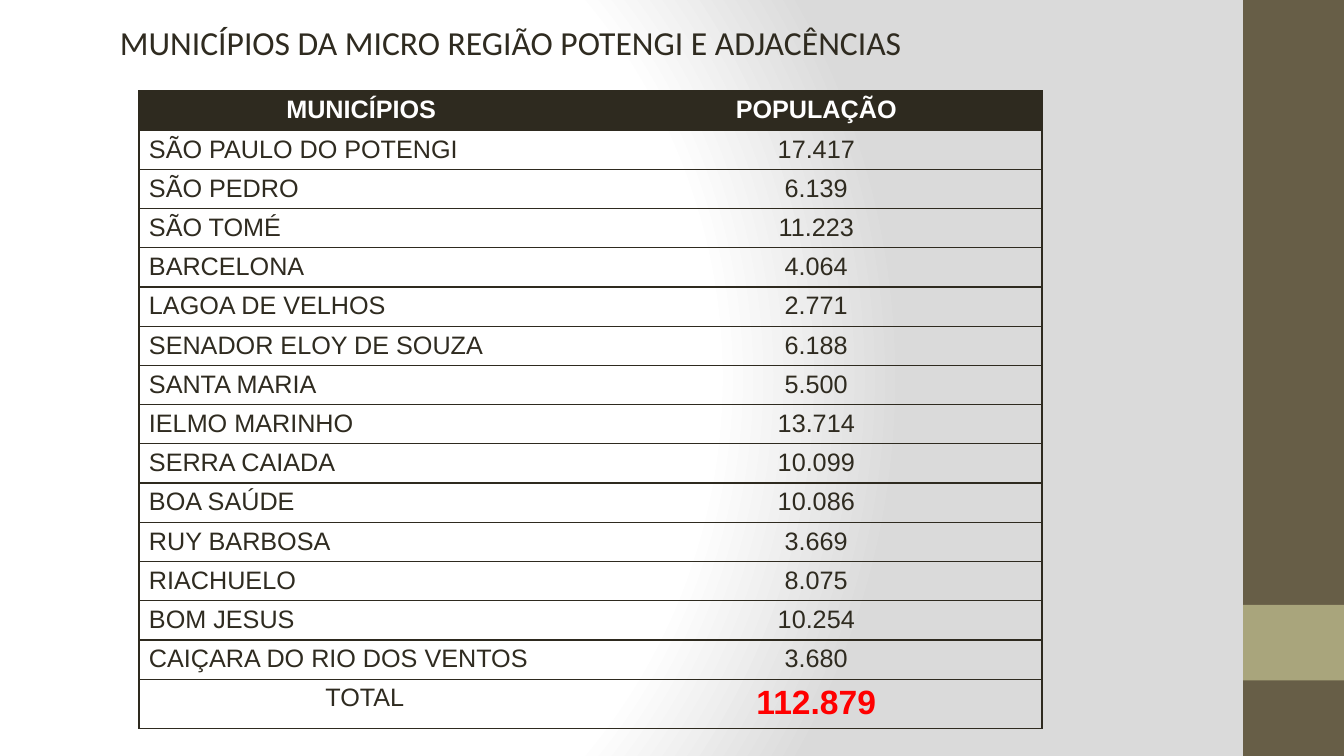
from pptx import Presentation
from pptx.dml.color import RGBColor
from pptx.enum.shapes import MSO_SHAPE as Shape
from pptx.enum.text import MSO_ANCHOR as Anchor, PP_ALIGN as Align
from pptx.oxml import parse_xml
from pptx.oxml.ns import nsdecls
from pptx.util import Pt

PX = 914400 / 100.8
WIDTH, HEIGHT = 1344, 756

WHITE = RGBColor(0xFF, 0xFF, 0xFF)
GRAY = RGBColor(0xDA, 0xDA, 0xDA)
BROWN = RGBColor(0x67, 0x5E, 0x47)
OLIVE = RGBColor(0xA9, 0xA5, 0x7C)
INK = RGBColor(0x2F, 0x2B, 0x20)
DARK = RGBColor(0x2E, 0x2A, 0x1F)
RED = RGBColor(0xFF, 0x00, 0x00)

TITLE = "MUNICÍPIOS DA MICRO REGIÃO POTENGI E ADJACÊNCIAS"
HEADER = ("MUNICÍPIOS ", "POPULAÇÃO")
TOWNS = [
    ("SÃO PAULO DO POTENGI", "17.417"),
    ("SÃO PEDRO", "6.139"),
    ("SÃO TOMÉ", "11.223"),
    ("BARCELONA", "4.064"),
    ("LAGOA DE VELHOS", "2.771"),
    ("SENADOR ELOY DE SOUZA", "6.188"),
    ("SANTA MARIA", "5.500"),
    ("IELMO MARINHO", "13.714"),
    ("SERRA CAIADA", "10.099"),
    ("BOA SAÚDE", "10.086"),
    ("RUY BARBOSA", "3.669"),
    ("RIACHUELO", "8.075"),
    ("BOM JESUS", "10.254"),
    ("CAIÇARA DO RIO DOS VENTOS", "3.680"),
]
TOTAL = ("TOTAL", "112.879")
TOTAL_HEIGHT = 48


def px(*lengths):
    return [round(length * PX) for length in lengths]


def write(frame, text, size=18, font="Arial", color=INK, bold=False, align=Align.LEFT):
    paragraph = frame.paragraphs[0]
    paragraph.alignment = align
    run = paragraph.add_run()
    run.text = text
    run.font.size = Pt(size)
    run.font.name = font
    run.font.bold = bold
    run.font.color.rgb = color


def add_background(slide):
    """Radial gradient, white on the left and gray on the right."""
    slide.background.fill.gradient()
    gradient = slide.element.xpath(".//p:bgPr/a:gradFill")[0]
    stops = "".join(
        f'<a:gs pos="{position * 1000}"><a:srgbClr val="{color}"/></a:gs>'
        for position, color in ((0, WHITE), (75, WHITE), (100, GRAY)))
    gradient.getparent().replace(gradient, parse_xml(
        f'<a:gradFill {nsdecls("a")} rotWithShape="1"><a:gsLst>{stops}</a:gsLst>'
        '<a:path path="circle"><a:fillToRect l="20000" t="50000" r="100000" b="50000"/>'
        '</a:path></a:gradFill>'))


def add_block(slide, box, color):
    shape = slide.shapes.add_shape(Shape.RECTANGLE, *px(*box))
    shape.shadow.inherit = False
    shape.fill.solid()
    shape.fill.fore_color.rgb = color
    shape.line.fill.background()


def add_sidebar(slide, left, top, width, height):
    add_block(slide, (left, top, width, height), BROWN)
    add_block(slide, (left, top + height * 0.8, width, height * 0.1), OLIVE)


def add_title(slide, left, top, width, height):
    frame = slide.shapes.add_textbox(*px(left, top, width, height)).text_frame
    frame.word_wrap = True
    frame.vertical_anchor = Anchor.TOP
    write(frame, TITLE, size=24, font="Calibri")


def set_borders(cell, open_side):
    """Draw every edge of the cell but the one between the columns."""
    properties = cell._tc.get_or_add_tcPr()
    for index, side in enumerate("LRTB"):
        if side == open_side:
            paint = "<a:noFill/>"
        else:
            paint = f'<a:solidFill><a:srgbClr val="{DARK}"/></a:solidFill>'
        properties.insert(index, parse_xml(
            f'<a:ln{side} {nsdecls("a")} w="12700">{paint}</a:ln{side}>'))


def add_population_table(slide, left, top, width, height):
    rows = [HEADER, *TOWNS, TOTAL]
    last = len(rows) - 1
    frame = slide.shapes.add_table(len(rows), 2, *px(left, top, width, height))
    table = frame.table
    table.first_row = table.horz_banding = False
    for column in table.columns:
        column.width, = px(width / 2)

    row_height = (height - TOTAL_HEIGHT) / last
    for number, values in enumerate(rows):
        table.rows[number].height, = px(TOTAL_HEIGHT if number == last else row_height)
        for position, text in enumerate(values):
            cell = table.cell(number, position)
            cell.margin_left, cell.margin_right, cell.margin_top, cell.margin_bottom = px(10, 10, 5, 4)
            cell.vertical_anchor = Anchor.TOP
            style = {}
            if position == 1 or number in (0, last):
                style["align"] = Align.CENTER
            if number == 0:
                cell.fill.solid()
                cell.fill.fore_color.rgb = DARK
                style.update(color=WHITE, bold=True)
            else:
                cell.fill.background()
            if number == last and position == 1:
                style.update(size=24, color=RED, bold=True)
            write(cell.text_frame, text, **style)
            set_borders(cell, open_side="RL"[position])


def main():
    presentation = Presentation()
    presentation.slide_width, presentation.slide_height = px(WIDTH, HEIGHT)
    slide = presentation.slides.add_slide(presentation.slide_layouts[6])
    add_background(slide)
    add_sidebar(slide, 1243, 0, 101, HEIGHT)
    add_title(slide, 110, 17, 1072, 61)
    add_population_table(slide, 139, 91, 903, 623)
    presentation.save("out.pptx")


if __name__ == "__main__":
    main()
